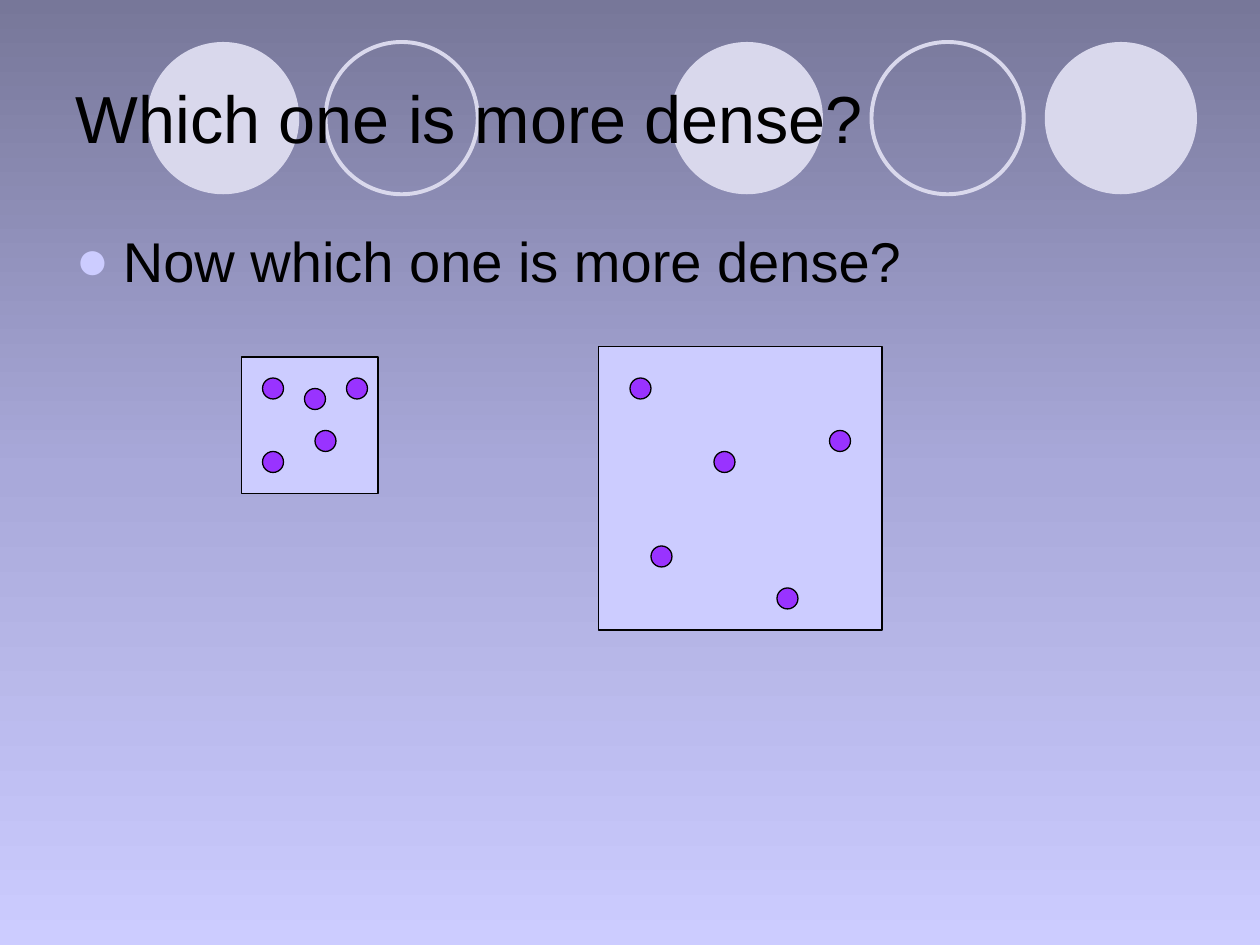
from copy import deepcopy

from lxml import etree
from pptx import Presentation
from pptx.dml.color import RGBColor
from pptx.enum.shapes import MSO_SHAPE
from pptx.enum.text import MSO_ANCHOR, MSO_AUTO_SIZE, PP_ALIGN
from pptx.oxml.ns import qn
from pptx.util import Pt

OVAL, RECTANGLE = MSO_SHAPE.OVAL, MSO_SHAPE.RECTANGLE
MIDDLE, TOP = MSO_ANCHOR.MIDDLE, MSO_ANCHOR.TOP
LEFT = PP_ALIGN.LEFT
NO_AUTOFIT = MSO_AUTO_SIZE.NONE

PX = 9525  # EMU per pixel, 96 pixels to the inch
COLORS = {
    "sky_top": "777799",
    "sky_middle": "A9A9DA",
    "sky_bottom": "CCCCFF",
    "ring": "D9D8EC",
    "box": "CCCCFF",
    "bullet": "CCCCFF",
    "particle": "9933FF",
    "ink": "000000",
}
PARTICLE_SIZE = 16
DENSE_PARTICLES = [(16, 16), (48, 24), (16, 72), (56, 56), (80, 16)]
SPARSE_PARTICLES = [(24, 24), (88, 80), (40, 152), (136, 184), (176, 64)]
# Offset of each header circle and whether it is filled
CIRCLES = [(399, True), (684, True), (0, True), (552, False), (136, False)]


def rgb(name):
    return RGBColor.from_string(COLORS[name])


def add_square(page, kind, left, top, size, fill=None, line=None, width=0.75):
    """Add a preset shape of equal width and height."""
    shape = page.shapes.add_shape(kind, left * PX, top * PX, size * PX, size * PX)
    shape.shadow.inherit = False
    if fill:
        shape.fill.solid()
        shape.fill.fore_color.rgb = rgb(fill)
    else:
        shape.fill.background()
    if line:
        shape.line.color.rgb = rgb(line)
        shape.line.width = Pt(width)
    else:
        shape.line.fill.background()


def paint_background(page):
    fill = page.background.fill
    fill.gradient()
    fill.gradient_angle = 270
    stop_list = page.element.find(".//" + qn("a:gsLst"))
    stop_list.append(deepcopy(stop_list[0]))
    names = ("sky_top", "sky_middle", "sky_bottom")
    for stop, name, position in zip(fill.gradient_stops, names, (0, 0.5, 1)):
        stop.color.rgb = rgb(name)
        stop.position = position


def add_header_circles(page, left, top, size):
    for offset, filled in CIRCLES:
        fill, line = ("ring", None) if filled else (None, "ring")
        add_square(page, OVAL, left + offset, top, size, fill, line, 2.25)


def place_text(page, holder, box, text, size, anchor):
    """Move a placeholder to the box, in front of the header, and fill it."""
    page.shapes.element.append(holder.element)
    holder.left, holder.top, holder.width, holder.height = (n * PX for n in box)
    frame = holder.text_frame
    frame.text = text
    frame.auto_size = NO_AUTOFIT
    frame.vertical_anchor = anchor
    para = frame.paragraphs[0]
    para.alignment = LEFT
    para.font.name = "Arial"
    para.font.size = Pt(size)
    para.font.color.rgb = rgb("ink")
    return para


def add_bullet(para, indent):
    properties = para._p.get_or_add_pPr()
    properties.set("marL", str(indent * PX))
    properties.set("indent", str(-indent * PX))
    spacing = etree.SubElement(properties, qn("a:spcBef"))
    etree.SubElement(spacing, qn("a:spcPct")).set("val", "20000")
    color = etree.SubElement(properties, qn("a:buClr"))
    etree.SubElement(color, qn("a:srgbClr")).set("val", COLORS["bullet"])
    etree.SubElement(properties, qn("a:buFont")).set("typeface", "Arial")
    etree.SubElement(properties, qn("a:buChar")).set("char", "●")
    # The schema wants the default run properties last
    properties.append(properties.find(qn("a:defRPr")))


def add_particle_box(page, left, top, size, particles):
    add_square(page, RECTANGLE, left, top, size, "box", "ink")
    for x, y in particles:
        add_square(page, OVAL, left + x, top + y, PARTICLE_SIZE, "particle", "ink")


def main():
    deck = Presentation()
    deck.slide_width, deck.slide_height = 960 * PX, 720 * PX
    page = deck.slides.add_slide(deck.slide_layouts[1])
    title, body = page.placeholders

    paint_background(page)
    add_header_circles(page, 112, 32, 116)
    place_text(page, title, (48, 29, 864, 120),
               "Which one is more dense?", 38, MIDDLE)
    question = place_text(page, body, (48, 168, 864, 475),
                          "Now which one is more dense?", 32, TOP)
    add_bullet(question, 36)
    add_particle_box(page, 184, 272, 104, DENSE_PARTICLES)
    add_particle_box(page, 456, 264, 216, SPARSE_PARTICLES)
    deck.save("out.pptx")


if __name__ == "__main__":
    main()
